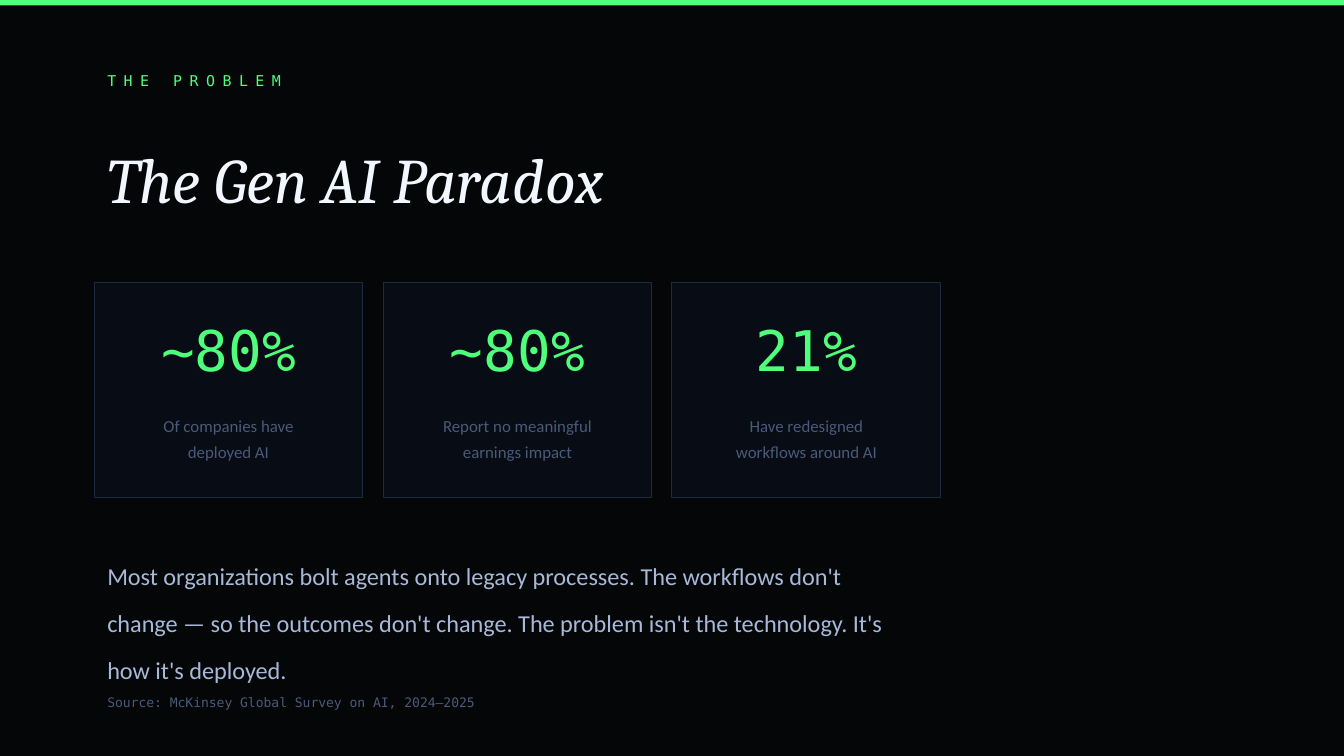
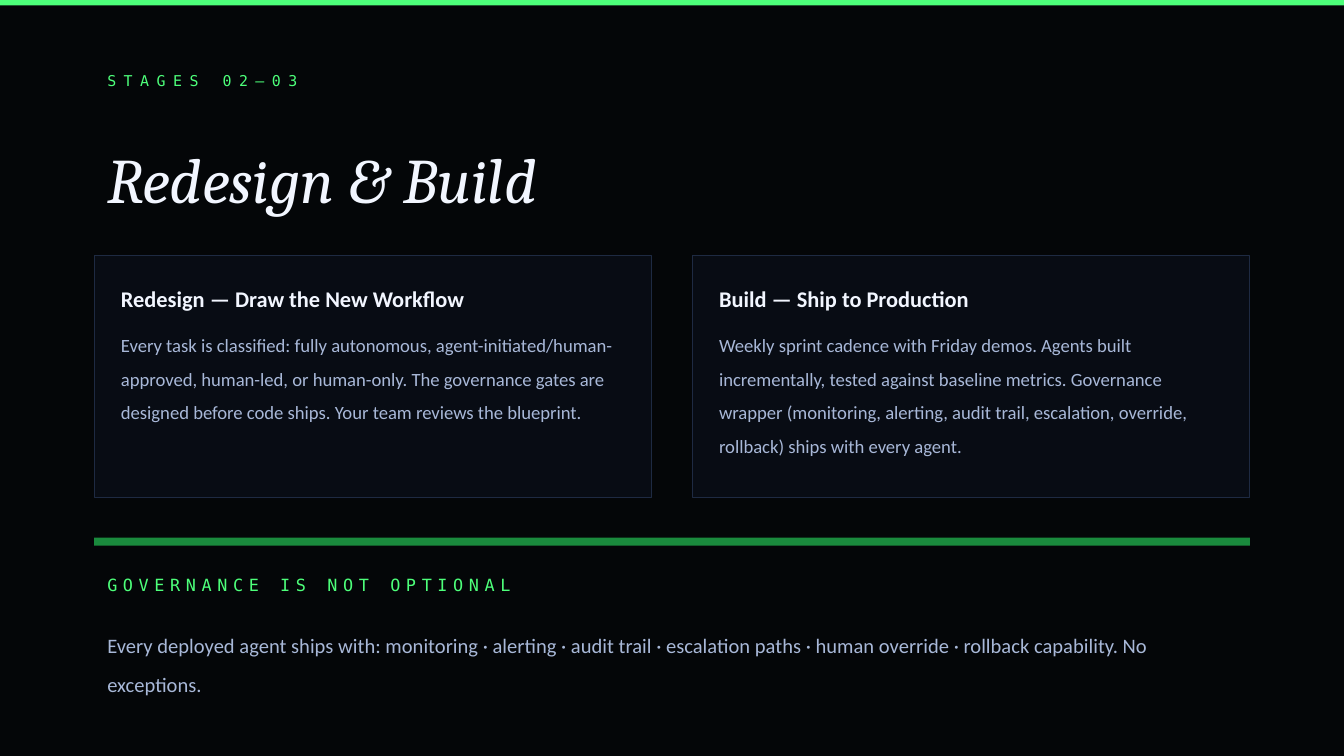
from pptx import Presentation
from pptx.dml.color import RGBColor
from pptx.enum.shapes import MSO_SHAPE
from pptx.enum.text import MSO_ANCHOR, PP_ALIGN
from pptx.util import Inches, Pt

RECT = MSO_SHAPE.RECTANGLE
TOP, MIDDLE = MSO_ANCHOR.TOP, MSO_ANCHOR.MIDDLE
LEFT, CENTER = PP_ALIGN.LEFT, PP_ALIGN.CENTER

COLS, ROWS = 100, 56.25
CELL = Inches(0.1)
MARGIN = 7
CONTENT_W = COLS - 2 * MARGIN

GREEN, DARK_GREEN = "4DFF7A", "1A8A3D"
BACKGROUND, CARD, CARD_LINE = "040608", "080C14", "1E2A42"
WHITE, BODY, MUTED = "F2F6FF", "A8B8D8", "4A5A7A"
SANS, SERIF, MONO = "Calibri", "Cambria", "DejaVu Sans Mono"

STATS = [
    ("~80%", "Of companies have\ndeployed AI"),
    ("~80%", "Report no meaningful\nearnings impact"),
    ("21%", "Have redesigned\nworkflows around AI"),
]
STAGES = [
    ("Redesign — Draw the New Workflow",
     "Every task is classified: fully autonomous, agent-initiated/human-approved, "
     "human-led, or human-only. The governance gates are designed before code ships. "
     "Your team reviews the blueprint."),
    ("Build — Ship to Production",
     "Weekly sprint cadence with Friday demos. Agents built incrementally, tested "
     "against baseline metrics. Governance wrapper (monitoring, alerting, audit trail, "
     "escalation, override, rollback) ships with every agent."),
]


def rgb(value):
    """Turn a hex string into a colour."""
    return RGBColor.from_string(value)


def grid(*cells):
    """Convert grid cells to slide lengths."""
    return [round(n * CELL) for n in cells]


def add_rect(s, box, fill, line=None):
    """Draw a flat rectangle with an optional hairline border."""
    sp = s.shapes.add_shape(RECT, *grid(*box))
    sp.shadow.inherit = False
    sp.fill.solid()
    sp.fill.fore_color.rgb = rgb(fill)
    if line:
        sp.line.color.rgb = rgb(line)
        sp.line.width = Pt(0.5)
    else:
        sp.line.fill.background()


def add_text(s, box, text, size, color, font=SANS, bold=False, italic=False,
             align=LEFT, anchor=TOP, leading=None, tracking=None, inset=True):
    """Place a wrapped text box, one paragraph for each line of text."""
    tf = s.shapes.add_textbox(*grid(*box)).text_frame
    tf.word_wrap = True
    tf.vertical_anchor = anchor
    if not inset:
        tf.margin_left = tf.margin_right = tf.margin_top = tf.margin_bottom = 0
    for i, line in enumerate(text.split("\n")):
        p = tf.add_paragraph() if i else tf.paragraphs[0]
        p.alignment = align
        if leading:
            p.line_spacing = leading
        r = p.add_run()
        r.text = line
        r.font.name, r.font.size = font, Pt(size)
        r.font.bold, r.font.italic = bold, italic
        r.font.color.rgb = rgb(color)
        if tracking:
            r.font._element.set("spc", str(tracking * 100))


def add_label(s, box, text, size, tracking):
    """Write a widely spaced green label."""
    add_text(s, box, text, size, GREEN, MONO, anchor=MIDDLE, tracking=tracking)


def add_base(prs, label, title):
    """Add a slide with the shared background, top band, label and title."""
    s = prs.slides.add_slide(prs.slide_layouts[6])
    s.background.fill.solid()
    s.background.fill.fore_color.rgb = rgb(BACKGROUND)
    add_rect(s, (0, 0, COLS, 0.4), GREEN)
    add_label(s, (MARGIN, 4.5, CONTENT_W, 3), label, 8, 4)
    add_text(s, (MARGIN, 8, CONTENT_W, 10), title, 34, WHITE, SERIF,
             italic=True, anchor=MIDDLE, leading=1.1)
    return s


def add_cards(s, box, gap, items, fill_card):
    """Split a box into equal cards and fill each from its item."""
    x, y, w, h = box
    card_w = (w - gap * (len(items) - 1)) / len(items)
    for i, item in enumerate(items):
        card = (x + i * (card_w + gap), y, card_w, h)
        add_rect(s, card, CARD, CARD_LINE)
        fill_card(s, card, *item)


def fill_stat(s, box, value, caption):
    """Write a large figure over its caption."""
    x, y, w, _ = box
    add_text(s, (x, y + 1.5, w, 7), value, 30, GREEN, MONO, align=CENTER, anchor=MIDDLE)
    add_text(s, (x + 1.5, y + 9, w - 3, 5.5), caption, 9, MUTED, align=CENTER, leading=1.3)


def fill_stage(s, box, heading, body):
    """Write a stage heading over its description."""
    x, y, w, _ = box
    add_text(s, (x + 2, y + 1.5, w - 4, 3.5), heading, 12, WHITE, bold=True,
             anchor=MIDDLE, inset=False)
    add_text(s, (x + 2, y + 5, w - 4, 11), body, 10, BODY, leading=1.5, inset=False)


def add_governance(s, box):
    """Add the green rule with the governance note below it."""
    x, y, w, h = box
    add_rect(s, (x, y, w, 0.6), DARK_GREEN)
    add_label(s, (x, y + 2, w, 3), "GOVERNANCE IS NOT OPTIONAL", 9, 3)
    add_text(s, (x, y + 5.5, w, h - 5.5),
             "Every deployed agent ships with: monitoring · alerting · audit trail · "
             "escalation paths · human override · rollback capability. No exceptions.",
             11, BODY, leading=1.6)


def add_conclusion(s, box):
    """Add the closing statement and its source."""
    x, y, w, h = box
    add_text(s, (x, y, w, h - 1.5),
             "Most organizations bolt agents onto legacy processes. The workflows don't "
             "change — so the outcomes don't change. The problem isn't the technology. "
             "It's how it's deployed.", 13, BODY, leading=1.6)
    add_text(s, (x, y + h - 2.5, w - 10, 2.5),
             "Source: McKinsey Global Survey on AI, 2024–2025", 7, MUTED, MONO, anchor=MIDDLE)


def build_problem(prs):
    """Build the problem slide."""
    s = add_base(prs, "THE PROBLEM", "The Gen AI Paradox")
    add_cards(s, (MARGIN, 21, 63, 16), 1.5, STATS, fill_stat)
    add_conclusion(s, (MARGIN, 40, 60, 13.5))


def build_stages(prs):
    """Build the redesign and build slide."""
    s = add_base(prs, "STAGES 02–03", "Redesign & Build")
    add_cards(s, (MARGIN, 19, CONTENT_W, 18), 3, STAGES, fill_stage)
    add_governance(s, (MARGIN, 40, CONTENT_W, 12.5))


def main():
    """Build and save the presentation."""
    prs = Presentation()
    prs.slide_width, prs.slide_height = grid(COLS, ROWS)
    build_problem(prs)
    build_stages(prs)
    prs.save("out.pptx")


if __name__ == "__main__":
    main()
